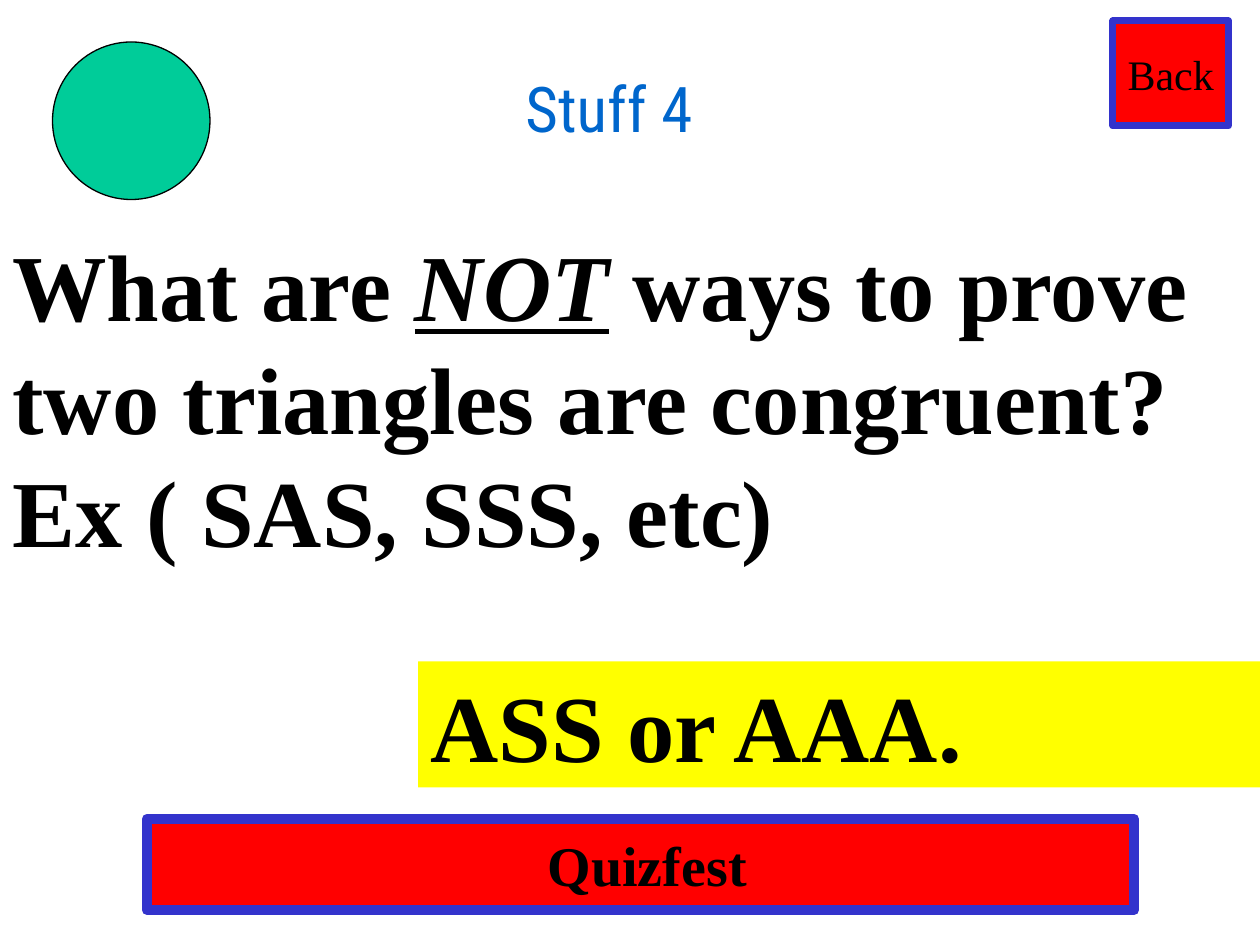
import pptx
import pptx.dml.color
import pptx.enum.shapes
import pptx.enum.text
import pptx.oxml
import pptx.oxml.ns
import pptx.util

Pt = pptx.util.Pt
SHAPES = pptx.enum.shapes.MSO_SHAPE
ANCHOR = pptx.enum.text.MSO_ANCHOR
ALIGN = pptx.enum.text.PP_ALIGN
SERIF = "Times New Roman"


def colour(hex_string):
    """Turn a hex string into a colour."""
    return pptx.dml.color.RGBColor.from_string(hex_string)


def place(part, box):
    """Move a part to a box given in points."""
    part.left, part.top, part.width, part.height = map(Pt, box)


def format_run(run, size, face=SERIF, hex_string="000000", bold=False):
    """Set the look of a run."""
    run.font.size = Pt(size)
    run.font.name = face
    run.font.bold = bold
    run.font.color.rgb = colour(hex_string)


def add_panel(slide, kind, box, fill, line=None, width=0):
    """Add a filled shape, outlined if a line colour is given."""
    panel = slide.shapes.add_shape(kind, *map(Pt, box))
    panel.shadow.inherit = False
    panel.fill.solid()
    panel.fill.fore_color.rgb = colour(fill)
    if line:
        panel.line.color.rgb = colour(line)
        panel.line.width = Pt(width)
    else:
        panel.line.fill.background()
    return panel


def label(panel, text, size, align, bold=True, wrap=True):
    """Write one line of text in a panel, centred vertically."""
    frame = panel.text_frame
    frame.word_wrap = wrap
    frame.vertical_anchor = ANCHOR.MIDDLE
    frame.text = text
    frame.paragraphs[0].alignment = align
    format_run(frame.paragraphs[0].runs[0], size, bold=bold)
    return frame


def add_title(slide, box):
    """Format the title placeholder with its outlined letters."""
    title = slide.shapes.title
    place(title, box)
    frame = title.text_frame
    frame.text = "Stuff 4"
    frame.word_wrap = False
    frame.auto_size = pptx.enum.text.MSO_AUTO_SIZE.NONE
    frame.vertical_anchor = ANCHOR.TOP
    frame.paragraphs[0].alignment = ALIGN.CENTER
    run = frame.paragraphs[0].runs[0]
    format_run(run, 36, "Roboto Condensed", "0066CC")
    outline = pptx.oxml.parse_xml(
        f'<a:ln {pptx.oxml.ns.nsdecls("a")} w="{Pt(1.5)}"><a:solidFill>'
        '<a:srgbClr val="99CCFF"/></a:solidFill></a:ln>')
    run.font._element.insert(0, outline)


def add_question(slide, box):
    """Write the question with its stressed word."""
    frame = slide.shapes.add_textbox(*map(Pt, box)).text_frame
    frame.word_wrap = True
    question = frame.paragraphs[0]
    for text, stressed in (
            ("What are ", False), ("NOT", True),
            (" ways to prove two triangles are congruent? Ex ( SAS, SSS, etc)", False)):
        run = question.add_run()
        run.text = text
        format_run(run, 54, bold=True)
        run.font.italic = run.font.underline = stressed


def add_answer(slide, box):
    """Add the answer strip."""
    strip = add_panel(slide, SHAPES.RECTANGLE, box, "FFFF00")
    label(strip, "ASS or AAA.", 54, ALIGN.LEFT)


def add_back_button(slide, box):
    """Add the button that leads back."""
    button = add_panel(slide, SHAPES.RECTANGLE, box, "FF0000", "3333CC", 4)
    label(button, "Back", 24, ALIGN.CENTER, bold=False, wrap=False)


def add_game_banner(slide, box):
    """Add the banner with the name of the game."""
    banner = add_panel(slide, SHAPES.RECTANGLE, box, "FF0000", "3333CC", 6)
    label(banner, "Quizfest", 32, ALIGN.CENTER).margin_left = Pt(15)


def main():
    """Build and save the slide."""
    deck = pptx.Presentation()
    deck.slide_width, deck.slide_height = Pt(720), Pt(540)
    slide = deck.slides.add_slide(deck.slide_layouts[5])
    add_game_banner(slide, (84, 468, 564, 52))
    add_title(slide, (168, 36, 360, 45))
    add_back_button(slide, (636, 12, 66, 60))
    add_question(slide, (0, 126, 720, 201.6))
    add_answer(slide, (239, 378, 481, 72))
    add_panel(slide, SHAPES.OVAL, (30, 24, 90, 90), "00CC99", "000000", 0.75)
    deck.save("out.pptx")


if __name__ == "__main__":
    main()
